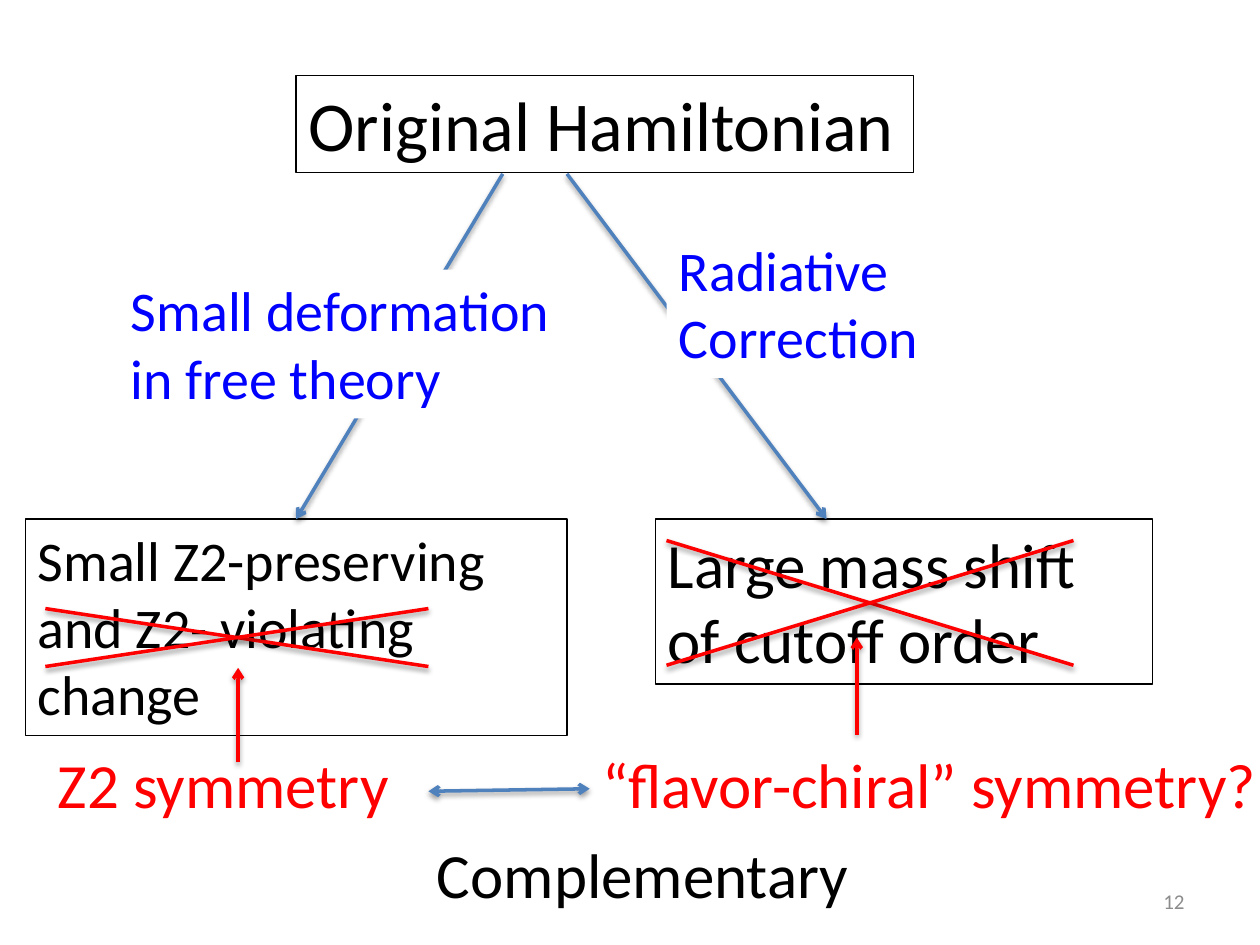
from lxml import etree
from pptx import Presentation
from pptx.dml.color import RGBColor
from pptx.enum.shapes import MSO_CONNECTOR
from pptx.enum.text import MSO_ANCHOR, MSO_AUTO_SIZE, PP_ALIGN
from pptx.oxml import parse_xml
from pptx.oxml.ns import nsdecls, qn
from pptx.util import Inches, Pt

BLACK = RGBColor(0x00, 0x00, 0x00)
WHITE = RGBColor(0xFF, 0xFF, 0xFF)
BLUE = RGBColor(0x00, 0x00, 0xFF)
STEEL = RGBColor(0x4F, 0x81, 0xBD)
RED = RGBColor(0xFF, 0x00, 0x00)
GREY = RGBColor(0x8C, 0x8C, 0x8C)

STRAIGHT = MSO_CONNECTOR.STRAIGHT
TOP_SIDE = 0
COLUMNS, ROWS = 100, 75

SHADOW = f"""<a:effectLst {nsdecls('a')}>
  <a:outerShdw blurRad="{Pt(3.1)}" dist="{Pt(1.6)}" dir="5400000" rotWithShape="0">
    <a:srgbClr val="000000"><a:alpha val="38000"/></a:srgbClr>
  </a:outerShdw>
</a:effectLst>"""


class Diagram:
    """Draws on one slide; all lengths are columns and rows of its grid."""

    font_name = "Calibri"
    border_width = Pt(0.75)
    line_width = Pt(2)

    def __init__(self, presentation):
        self.slide = presentation.slides.add_slide(presentation.slide_layouts[6])
        self.column = presentation.slide_width / COLUMNS
        self.row = presentation.slide_height / ROWS

    def place(self, *lengths):
        """Turn alternating columns and rows into slide lengths."""
        units = (self.column, self.row) * (len(lengths) // 2)
        return [round(length * unit) for length, unit in zip(lengths, units)]

    def text(self, lines, area, size, color, wrap=False, fill=None, border=None,
             align=PP_ALIGN.LEFT, anchor=MSO_ANCHOR.TOP, grow=True):
        shape = self.slide.shapes.add_textbox(*self.place(*area))
        if fill is not None:
            shape.fill.solid()
            shape.fill.fore_color.rgb = fill
        if border is not None:
            shape.line.color.rgb = border
            shape.line.width = self.border_width
        frame = shape.text_frame
        frame_format = {
            "text": "\n".join(lines),
            "word_wrap": wrap,
            "vertical_anchor": anchor,
            "auto_size": MSO_AUTO_SIZE.SHAPE_TO_FIT_TEXT if grow else MSO_AUTO_SIZE.NONE,
        }
        for name, value in frame_format.items():
            setattr(frame, name, value)
        for paragraph in frame.paragraphs:
            paragraph.alignment = align
            paragraph.font.color.rgb = color
            for name, value in {"name": self.font_name, "size": Pt(size)}.items():
                setattr(paragraph.font, name, value)
        return shape

    def line(self, start, end, color, arrows=()):
        """Draw a shadowed line; arrows names its arrow ends, headEnd or tailEnd."""
        connector = self.slide.shapes.add_connector(STRAIGHT, *self.place(*start, *end))
        connector.line.color.rgb = color
        connector.line.width = self.line_width
        properties = connector.line._get_or_add_ln()
        for end_name in arrows:
            etree.SubElement(properties, qn(f"a:{end_name}"), type="arrow")
        connector._element.spPr.append(parse_xml(SHADOW))
        return connector

    def cross_out(self, left, top, right, bottom):
        self.line((left, top), (right, bottom), RED)
        self.line((right, top), (left, bottom), RED)


def main():
    presentation = Presentation()
    presentation.slide_width, presentation.slide_height = Inches(10), Inches(7.5)
    diagram = Diagram(presentation)
    to_end, both_ends = ("tailEnd",), ("headEnd", "tailEnd")

    # Starting point and its two consequences
    diagram.text(["Large mass shift of cutoff order"], (52, 41.2, 39.5, 13.1), 36, BLACK,
                 wrap=True, border=BLACK)
    diagram.text(["Original Hamiltonian"], (23.5, 6, 49, 7.7), 40, BLACK, border=BLACK)
    small_change = diagram.text(["Small Z2-preserving and Z2- violating change"],
                                (2, 41.2, 43, 17.2), 32, BLACK, wrap=True, border=BLACK)

    # Labelled branches
    deformation = diagram.line((39.9, 13.8), (23.5, 41.2), STEEL, to_end)
    deformation.end_connect(small_change, TOP_SIDE)
    diagram.line((45, 13.8), (65.6, 41.2), STEEL, to_end)
    diagram.text(["Small deformation", "in free theory"], (9.4, 21.4, 35.6, 11.8), 32, BLUE,
                 fill=WHITE)
    diagram.text(["Radiative", "Correction"], (52.9, 18.2, 21.2, 11.8), 32, BLUE, fill=WHITE)

    # Symmetries that forbid the crossed-out terms
    diagram.text(["Z2 symmetry"], (3.6, 58.7, 28.6, 7.1), 36, RED)
    diagram.cross_out(3.6, 48.3, 34, 52.9)
    diagram.line((18.9, 60.5), (18.9, 53), RED, to_end)
    diagram.text(["“flavor-chiral” symmetry?"], (46.8, 58.7, 54.4, 7.1), 36, RED)
    diagram.cross_out(52.9, 42.9, 85.2, 52.8)
    diagram.line((68, 58.3), (68, 50.6), RED, to_end)

    # Relation between the symmetries
    diagram.line((34, 62.8), (46.8, 62.6), STEEL, both_ends)
    diagram.text(["Complementary"], (33.7, 65.8, 35, 7.1), 36, BLACK)
    diagram.text(["12"], (71.7, 69.5, 23.3, 4), 12, GREY, wrap=True,
                 align=PP_ALIGN.RIGHT, anchor=MSO_ANCHOR.MIDDLE, grow=False)

    presentation.save("out.pptx")


if __name__ == "__main__":
    main()
